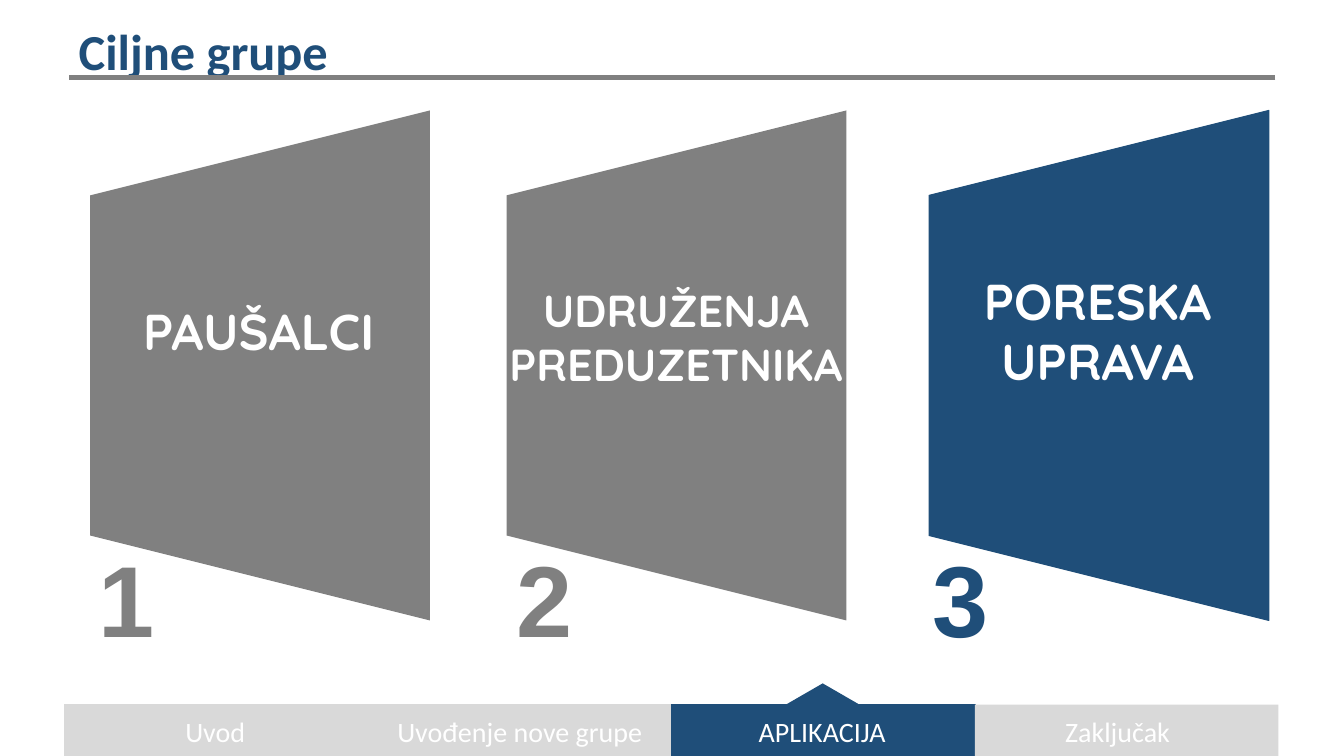
from pptx import Presentation
from pptx.dml.color import RGBColor
from pptx.enum.shapes import MSO_CONNECTOR, MSO_SHAPE
from pptx.enum.text import MSO_ANCHOR, MSO_AUTO_SIZE, PP_ALIGN
from pptx.oxml.ns import qn
from pptx.util import Pt
from lxml import etree

# Content
COLORS = {"blue": "1F4E79", "gray": "808080", "light": "D9D9D9", "white": "FFFFFF"}
TITLE = "Ciljne grupe"
# color, panel left, number box (left, width), label, label size, label box
GROUPS = [
    ("gray", 89, (88, 42), "PAUŠALCI", 36, (107, 293, 299, 71)),
    ("gray", 502, (502, 56), "UDRUŽENJA PREDUZETNIKA", 32, (491, 276, 359, 118)),
    ("blue", 921, (915, 67), "PORESKA UPRAVA", 36, (939, 263, 299, 131)),
]
# text, text left, text width, color, outline width
TABS = [
    ("Uvod", 107, 213, "light", 1),
    ("Uvođenje nove grupe", 356, 319, "light", 1),
    ("APLIKACIJA", 709, 213, "blue", 1),
    ("Zaključak", 1002, 213, "light", 0),
]

# Layout in px, 100 to the inch
PX = 9144
SLIDE_WIDTH, SLIDE_HEIGHT = 1333, 750
PANEL_TOP, PANEL_WIDTH, PANEL_HEIGHT = 110, 337, 506
NUMBER_TOP, NUMBER_HEIGHT = 528, 131
TAB_LEFT, TAB_TOP, TAB_WIDTH, TAB_HEIGHT = 64, 699, 301, 51

presentation = Presentation()
presentation.slide_width = SLIDE_WIDTH * PX
presentation.slide_height = SLIDE_HEIGHT * PX
slide = presentation.slides.add_slide(presentation.slide_layouts[5])


def rgb(name):
    return RGBColor.from_string(COLORS[name])


def emu(box):
    return [length * PX for length in box]


def add_text(text, box, size, color, font="Calibri", bold=False,
             align=PP_ALIGN.CENTER, wrap=True, shape=None):
    """Write text in a new text box, or in the given placeholder."""
    shape = shape or slide.shapes.add_textbox(*emu(box))
    shape.left, shape.top, shape.width, shape.height = emu(box)
    frame = shape.text_frame
    frame.text = text
    frame.word_wrap = wrap
    frame.auto_size = MSO_AUTO_SIZE.SHAPE_TO_FIT_TEXT
    frame.vertical_anchor = MSO_ANCHOR.TOP
    paragraph = frame.paragraphs[0]
    paragraph.alignment = align
    run_font = paragraph.runs[0].font
    run_font.name, run_font.size, run_font.bold = font, Pt(size), bold
    run_font.color.rgb = rgb(color)


def add_block(kind, box, color, outline=0, rotation=0):
    shape = slide.shapes.add_shape(kind, *emu(box))
    shape.rotation = rotation
    shape.shadow.inherit = False
    shape.fill.solid()
    shape.fill.fore_color.rgb = rgb(color)
    if outline:
        shape.line.color.rgb = rgb(color)
        shape.line.width = Pt(outline)
    else:
        shape.line.fill.background()


# Title and rule
add_text(TITLE, (68, 15, 270, 71), 36, "blue", bold=True, align=PP_ALIGN.LEFT,
         wrap=False, shape=slide.shapes.title)
rule = slide.shapes.add_connector(MSO_CONNECTOR.STRAIGHT, *emu((1265, 77, 68, 77)))
rule.line.color.rgb = rgb("gray")
rule.line.width = Pt(3)
etree.SubElement(rule._element.spPr, qn("a:effectLst"))

# Panels: trapezoids turned so that the narrow side faces left
turn_shift = (PANEL_HEIGHT - PANEL_WIDTH) // 2
for color, left, (number_left, number_width), label, size, label_box in GROUPS:
    add_block(MSO_SHAPE.TRAPEZOID,
              (left - turn_shift, PANEL_TOP + turn_shift, PANEL_HEIGHT, PANEL_WIDTH),
              color, outline=0.75 if color == "blue" else 0, rotation=270)

# Numbers and labels
for number, (color, left, (number_left, number_width), label, size, label_box) in enumerate(GROUPS, 1):
    add_text(str(number), (number_left, NUMBER_TOP, number_width, NUMBER_HEIGHT),
             72, color, font="Arial", bold=True)
    add_text(label, label_box, size, "white", font="Quicksand", bold=True)

# Navigation bar
for index, (text, left, width, color, outline) in enumerate(TABS):
    add_block(MSO_SHAPE.RECTANGLE,
              (TAB_LEFT + index * TAB_WIDTH, TAB_TOP, TAB_WIDTH, TAB_HEIGHT), color, outline)
for text, left, width, color, outline in TABS:
    add_text(text, (left, 704, width, 44), 20, "white")
add_block(MSO_SHAPE.ISOSCELES_TRIANGLE, (771, 678, 90, 26), "blue")

presentation.save("out.pptx")
